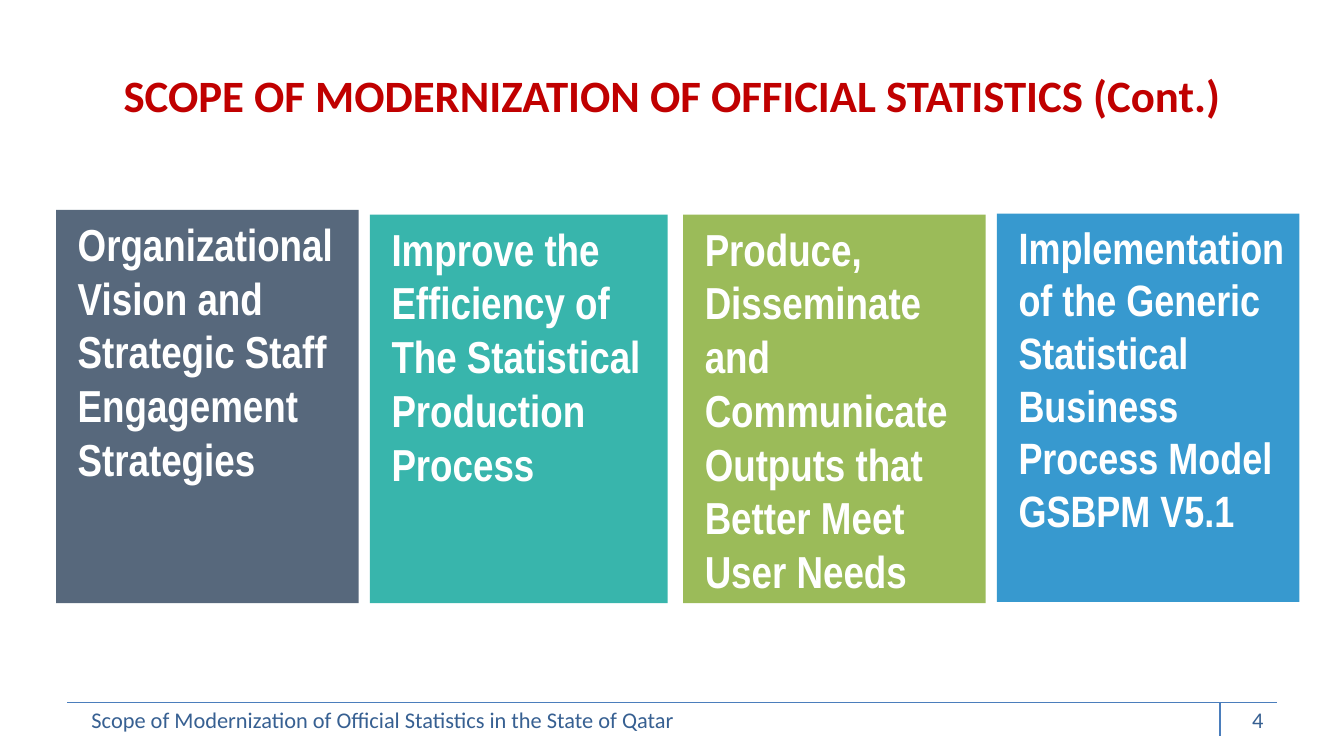
from lxml import etree
from pptx import Presentation
from pptx.dml.color import RGBColor
from pptx.enum.shapes import MSO_CONNECTOR, MSO_SHAPE
from pptx.enum.text import MSO_ANCHOR, PP_ALIGN
from pptx.oxml.ns import qn
from pptx.util import Cm, Pt

RECT = MSO_SHAPE.RECTANGLE
STRAIGHT = MSO_CONNECTOR.STRAIGHT
TOP, MIDDLE = MSO_ANCHOR.TOP, MSO_ANCHOR.MIDDLE
LEFT, CENTER, RIGHT = PP_ALIGN.LEFT, PP_ALIGN.CENTER, PP_ALIGN.RIGHT


def rgb(value):
    return RGBColor.from_string(value)


def write(sp, text, font, size, color, bold=False, align=LEFT, anchor=TOP):
    tf = sp.text_frame
    tf.word_wrap = True
    tf.vertical_anchor = anchor
    p = tf.paragraphs[0]
    p.alignment = align
    r = p.add_run()
    r.text = text
    r.font.name = font
    r.font.size = Pt(size)
    r.font.bold = bold
    r.font.color.rgb = rgb(color)


prs = Presentation()
prs.slide_width = Cm(25.4)
prs.slide_height = Cm(14.29)
s = prs.slides.add_slide(prs.slide_layouts[6])

footer = s.shapes.add_textbox(Cm(1.48), Cm(13.23), Cm(13.97), Cm(1.27))
write(footer, "Scope of Modernization of Official Statistics in the State of Qatar",
      "Calibri", 12, "376092")

for x1, y1, x2, y2 in [(1.27, 13.28, 24.13, 13.28), (23.06, 13.28, 23.06, 13.92)]:
    line = s.shapes.add_connector(STRAIGHT, Cm(x1), Cm(y1), Cm(x2), Cm(y2))
    line.line.color.rgb = rgb("4B7EBC")
    line.line.width = Pt(0.75)
    etree.SubElement(line._element.spPr, qn("a:effectLst"))

number = s.shapes.add_textbox(Cm(18.21), Cm(13.23), Cm(5.92), Cm(0.76))
write(number, "4", "Calibri", 12, "376092", align=RIGHT)

cards = [
    (1.06, 3.97, 5.72, 7.43, "57687C", 100, 24,
     "Organizational Vision and Strategic Staff Engagement Strategies"),
    (6.99, 4.06, 5.63, 7.34, "07A398", 80, 24,
     "Improve the Efficiency of The Statistical Production Process"),
    (12.91, 4.06, 5.72, 7.34, "9BBB59", 100, 24,
     "Produce, Disseminate and Communicate Outputs that Better Meet User Needs"),
    (18.84, 4.04, 5.72, 7.34, "0680C3", 80, 23.5,
     "Implementation of the Generic Statistical Business Process Model GSBPM V5.1"),
]
for x, y, w, h, color, opacity, size, text in cards:
    sp = s.shapes.add_shape(RECT, Cm(x), Cm(y), Cm(w), Cm(h))
    sp.shadow.inherit = False
    sp.line.fill.background()
    sp.fill.solid()
    sp.fill.fore_color.rgb = rgb(color)
    if opacity < 100:
        clr = sp._element.spPr.find(qn("a:solidFill")).find(qn("a:srgbClr"))
        etree.SubElement(clr, qn("a:alpha")).set("val", str(opacity * 1000))
    sp.text_frame.margin_left = Cm(0.41)
    sp.text_frame.margin_right = Cm(0.15)
    write(sp, text, "Arial Narrow", size, "FFFFFF", bold=True)

title = s.shapes.add_textbox(Cm(1.27), Cm(0.6), Cm(22.86), Cm(2.38))
write(title, "SCOPE OF MODERNIZATION OF OFFICIAL STATISTICS (Cont.)",
      "Calibri", 24, "C00000", bold=True, align=CENTER, anchor=MIDDLE)

prs.save("out.pptx")
